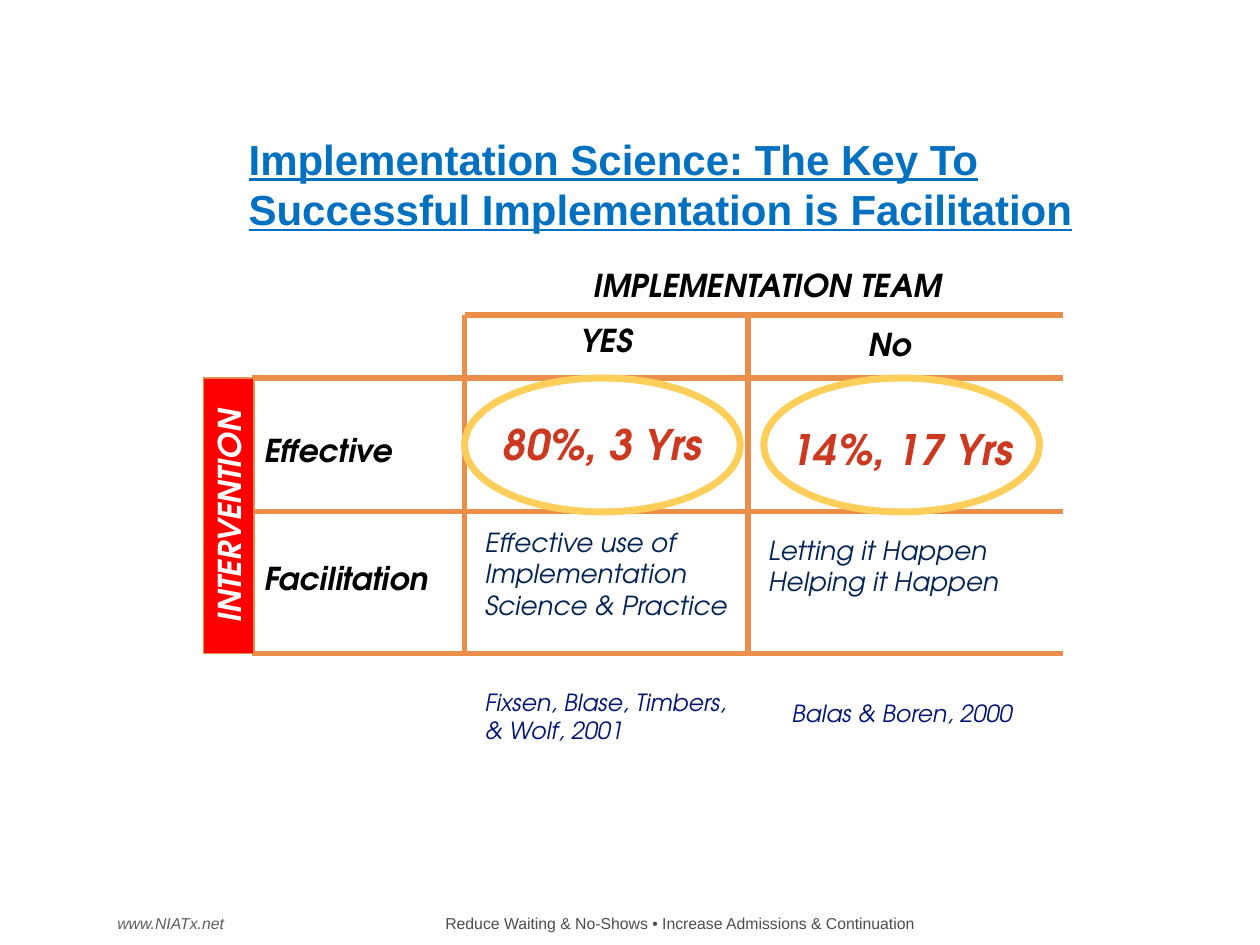
from lxml import etree
from pptx import Presentation
from pptx.dml import color
from pptx.enum import shapes, text
from pptx.oxml import ns
from pptx.util import Pt

COLORS = {
    "title": "0070C0", "grid": "EA8E4A", "band": "FF0000", "ring": "FDCE59",
    "label": "000000", "white": "FFFFFF", "result": "CC3921",
    "detail": "002353", "citation": "001574", "footer": "4D4D4D", "site": "5E5E5E",
}
DISPLAY = "TeX Gyre Adventor"
LEFT, CENTER = text.PP_ALIGN.LEFT, text.PP_ALIGN.CENTER


def rgb(name):
    return color.RGBColor.from_string(COLORS[name])


def write(sp, words, size, ink, font=DISPLAY, align=LEFT, bold=False, italic=True,
          underline=False, anchor=text.MSO_ANCHOR.TOP, wrap=True):
    tf = sp.text_frame
    tf.word_wrap = wrap
    tf.vertical_anchor = anchor
    p = tf.paragraphs[0]
    p.alignment = align
    p.text = words
    f = p.font
    f.name, f.size, f.color.rgb = font, Pt(size), rgb(ink)
    f.bold, f.italic, f.underline = bold, italic, underline


def add_text(s, box, words, size, ink, **style):
    sp = s.shapes.add_textbox(*map(Pt, box))
    write(sp, words, size, ink, **style)


def add_line(s, x1, y1, x2, y2):
    line = s.shapes.add_connector(shapes.MSO_CONNECTOR.STRAIGHT, *map(Pt, (x1, y1, x2, y2)))
    line.line.color.rgb = rgb("grid")
    line.line.width = Pt(3)
    etree.SubElement(line._element.spPr, ns.qn("a:effectLst"))


def add_outlined(s, kind, box, ink, width, fill=None):
    sp = s.shapes.add_shape(kind, *map(Pt, box))
    sp.shadow.inherit = False
    if fill:
        sp.fill.solid()
        sp.fill.fore_color.rgb = rgb(fill)
    else:
        sp.fill.background()
    sp.line.color.rgb = rgb(ink)
    sp.line.width = Pt(width)
    return sp


def add_title(s, box):
    add_text(s, box, "Implementation Science: The Key To Successful Implementation is Facilitation",
             24, "title", font="Arial", bold=True, italic=False, underline=True,
             anchor=text.MSO_ANCHOR.MIDDLE)


def add_grid(s, x, y, w, h):
    col1, col2, row1, row2 = x + 121.5, x + 283.5, y + 36, y + 112.5
    right, bottom = x + w, y + h
    for left, level in ((col1, y), (x, row1), (x, row2), (x, bottom)):
        add_line(s, left, level, right, level)
    for across, top in ((x, row1), (col1, y), (col2, y)):
        add_line(s, across, top, across, bottom)


def add_headings(s, x, y, w, h):
    heading = dict(size=18, ink="label", bold=True)
    add_text(s, (x + 126, y - 31.5, 337.5, 29), "IMPLEMENTATION TEAM", align=CENTER, **heading)
    add_text(s, (x + 121.5, y, 162, 29), "YES", align=CENTER, **heading)
    add_text(s, (x + 283.5, y + 2.25, 162, 29), "No", align=CENTER, **heading)
    add_text(s, (x, y + 63, 117, 29), "Effective", **heading)
    add_text(s, (x, y + 136, 117, 29), "Facilitation", **heading)

    length, depth = h - 36, 28.8
    cx, cy = x - 13.3, y + 36 + length / 2
    band = add_outlined(s, shapes.MSO_SHAPE.RECTANGLE,
                        (cx - length / 2, cy - depth / 2, length, depth), "grid", 0.75, "band")
    band.rotation = 270
    write(band, "INTERVENTION", 18, "white", align=CENTER, bold=True)


def add_outcomes(s, x, y):
    results = ((103.5, 55.5, "80%, 3 Yrs"), (274.5, 58.5, "14%, 17 Yrs"))
    for dx, dy, words in results:
        add_text(s, (x + dx, y + dy, 193.5, 36), words, 24, "result", align=CENTER, bold=True)

    details = (
        (126, 117, 157.5, 62, "Effective use of Implementation Science & Practice"),
        (288, 121.5, 166.5, 44, "Letting it Happen Helping it Happen"),
    )
    for dx, dy, w, h, words in details:
        add_text(s, (x + dx, y + dy, w, h), words, 15, "detail")

    citations = (
        (126, 209.5, 157.5, 40, "Fixsen, Blase, Timbers, & Wolf, 2001"),
        (301.5, 216, 144, 24, "Balas & Boren, 2000"),
    )
    for dx, dy, w, h, words in citations:
        add_text(s, (x + dx, y + dy, w, h), words, 13.5, "citation")

    for dx in (121.5, 292.5):
        add_outlined(s, shapes.MSO_SHAPE.OVAL, (x + dx, y + 36, 157.5, 76.5), "ring", 4)


def add_matrix(s, x, y, w, h):
    add_grid(s, x, y, w, h)
    add_headings(s, x, y, w, h)
    add_outcomes(s, x, y)


def add_footer(s, x, y, w, h):
    add_text(s, (x + 4.5, y, w - 4.5, h),
             "Reduce Waiting & No-Shows • Increase Admissions & Continuation",
             9, "footer", font="Arial", align=CENTER, italic=False)
    add_text(s, (x, y, 77, h), "www.NIATx.net", 9, "site", font="Arial", wrap=False)


def main():
    prs = Presentation()
    prs.slide_width, prs.slide_height = Pt(720), Pt(540)
    s = prs.slides.add_slide(prs.slide_layouts[6])
    add_footer(s, 60, 518.4, 652.5, 18)
    add_matrix(s, 144, 180, 463.5, 193.5)
    add_title(s, (135, 75.6, 490.5, 58.5))
    prs.save("out.pptx")


if __name__ == "__main__":
    main()
